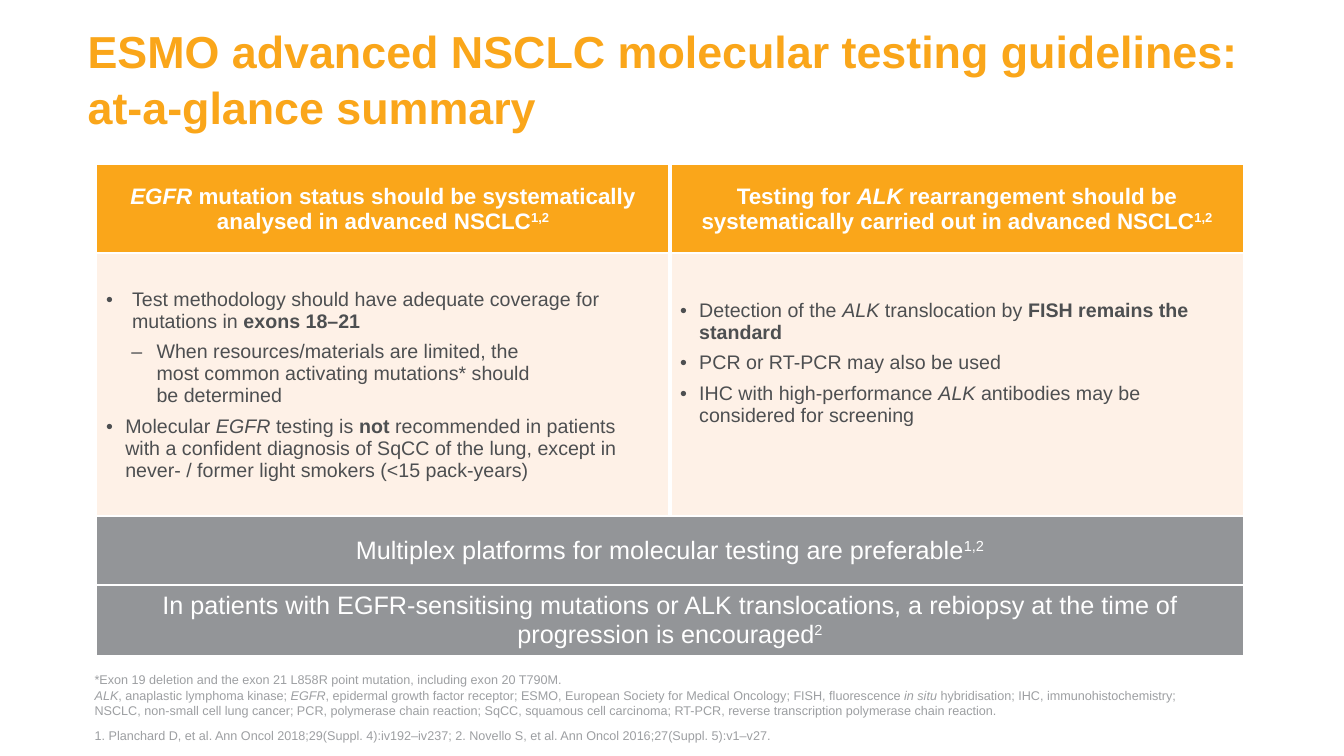
from copy import deepcopy
from dataclasses import dataclass

from lxml.etree import SubElement
from pptx import Presentation
from pptx.dml.color import RGBColor
from pptx.enum.text import MSO_ANCHOR, PP_ALIGN
from pptx.oxml import parse_xml
from pptx.oxml.ns import nsdecls, qn
from pptx.util import Pt

ORANGE = RGBColor(0xFA, 0xA6, 0x1A)
CREAM = RGBColor(0xFE, 0xF1, 0xE7)
GREY = RGBColor(0x93, 0x95, 0x98)
DARK = RGBColor(0x4D, 0x4F, 0x51)
NOTE = RGBColor(0x9D, 0x9F, 0xA2)
WHITE = RGBColor(0xFF, 0xFF, 0xFF)


@dataclass(frozen=True)
class Run:
    text: str
    bold: bool = False
    italic: bool = False
    superscript: bool = False


@dataclass(frozen=True)
class Para:
    runs: tuple[Run, ...]
    bullet: str = ""
    indent: float = 0
    hang: float = 0
    level: int = 0


@dataclass(frozen=True)
class Style:
    size: float
    color: RGBColor
    bold: bool = False
    align: PP_ALIGN = PP_ALIGN.LEFT
    line_spacing: float = 1.0
    space_before: float = 0


@dataclass(frozen=True)
class Box:
    left: float
    top: float
    width: float
    height: float
    anchor: MSO_ANCHOR
    margins: tuple[float, float]
    style: Style
    paras: tuple[Para, ...]


@dataclass(frozen=True)
class Cell:
    row: int
    col: int
    fill: RGBColor
    style: Style
    paras: tuple[Para, ...]
    bottom: float = 3.6
    full_width: bool = False


TITLE_STYLE = Style(32, ORANGE, bold=True, line_spacing=1.05)
NOTE_STYLE = Style(9, NOTE)
HEAD_STYLE = Style(16, WHITE, bold=True, align=PP_ALIGN.CENTER)
BODY_STYLE = Style(14, DARK, space_before=6)
BAND_STYLE = Style(18, WHITE, align=PP_ALIGN.CENTER)

BOXES = (
    Box(60.5, 486.7, 834.5, 29.5, MSO_ANCHOR.BOTTOM, (7.2, 3.6), NOTE_STYLE, (
        Para((Run("*Exon 19 deletion and the exon 21 L858R point mutation, including exon 20 T790M."),)),
        Para((
            Run("ALK", italic=True),
            Run(", anaplastic lymphoma kinase; "),
            Run("EGFR", italic=True),
            Run(", epidermal growth factor receptor; ESMO, European Society for Medical Oncology; FISH, fluorescence "),
            Run("in situ ", italic=True),
            Run("hybridisation; IHC, immunohistochemistry; \nNSCLC, non-small cell lung cancer; PCR, polymerase "
                "chain reaction; SqCC, squamous cell carcinoma; RT-PCR, reverse transcription polymerase chain reaction."),
        )),
    )),
    Box(60.5, 516.2, 834.5, 23.8, MSO_ANCHOR.TOP, (7.2, 3.6), NOTE_STYLE, (
        Para((Run("1. Planchard D, et al. Ann Oncol 2018;29(Suppl. 4):iv192–iv237; "
                  "2. Novello S, et al. Ann Oncol 2016;27(Suppl. 5):v1–v27."),)),
    )),
    Box(62.6, 24.5, 869.8, 61.2, MSO_ANCHOR.MIDDLE, (0, 0), TITLE_STYLE, (
        Para((Run("ESMO advanced NSCLC molecular testing guidelines: \nat-a-glance summary"),)),
    )),
)

CELLS = (
    Cell(0, 0, ORANGE, HEAD_STYLE, (Para((
        Run("EGFR", italic=True),
        Run(" mutation status should be systematically analysed in advanced NSCLC"),
        Run("1,2", superscript=True),
    )),)),
    Cell(0, 1, ORANGE, HEAD_STYLE, (Para((
        Run("Testing for "),
        Run("ALK ", italic=True),
        Run("rearrangement should be systematically carried out in advanced NSCLC"),
        Run("1,2", superscript=True),
    )),)),
    Cell(1, 0, CREAM, BODY_STYLE, (
        Para((
            Run("Test methodology should have adequate coverage for mutations in "),
            Run("exons 18–21", bold=True),
        ), "•", 18.5, 18.5),
        Para((
            Run("When resources/materials are limited, the \nmost common activating mutations* should \nbe determined"),
        ), "–", 36, 18, 1),
        Para((
            Run("Molecular "),
            Run("EGFR", italic=True),
            Run(" testing is "),
            Run("not", bold=True),
            Run(" recommended in patients \nwith a confident diagnosis of SqCC of the lung, "
                "except in never- / former light smokers (<15 pack-years)"),
        ), "•", 13.7, 13.7),
    )),
    Cell(1, 1, CREAM, BODY_STYLE, (
        Para((
            Run("Detection of the "),
            Run("ALK", italic=True),
            Run(" translocation by "),
            Run("FISH remains the standard", bold=True),
        ), "•", 13.7, 13.7),
        Para((Run("PCR or RT-PCR may also be used"),), "•", 13.7, 13.7),
        Para((
            Run("IHC with high-performance "),
            Run("ALK", italic=True),
            Run(" antibodies may be considered for screening"),
        ), "•", 13.7, 13.7),
    ), bottom=35),
    Cell(2, 0, GREY, BAND_STYLE, (Para((
        Run("Multiplex platforms for molecular testing are preferable"),
        Run("1,2", superscript=True),
    )),), full_width=True),
    Cell(3, 0, GREY, BAND_STYLE, (Para((
        Run("In patients with EGFR-sensitising mutations or ALK translocations, "
            "a rebiopsy at the time of progression is encouraged"),
        Run("2", superscript=True),
    )),), full_width=True),
)


def add_run(p, run: Run, style: Style) -> None:
    """Append a run to a paragraph, turning newlines into line breaks."""
    for i, line in enumerate(run.text.split("\n")):
        if i:
            p.add_line_break()
            p._p[-1].append(deepcopy(r._r.rPr))
        r = p.add_run()
        r.text = line
        r.font.name = "Arial"
        r.font.size = Pt(style.size)
        r.font.bold = style.bold or run.bold
        r.font.italic = run.italic
        r.font.color.rgb = style.color
        if run.superscript:
            r._r.get_or_add_rPr().set("baseline", "30000")


def fill_text(tf, paras: tuple[Para, ...], style: Style) -> None:
    """Write styled paragraphs into a text frame."""
    for i, para in enumerate(paras):
        p = tf.add_paragraph() if i else tf.paragraphs[0]
        if para.bullet:
            pPr = p._p.get_or_add_pPr()
            pPr.set("marL", str(Pt(para.indent)))
            pPr.set("indent", str(-Pt(para.hang)))
            SubElement(pPr, qn("a:buFont")).set("typeface", "Arial")
            SubElement(pPr, qn("a:buChar")).set("char", para.bullet)
        p.level = para.level
        p.alignment = style.align
        p.line_spacing = style.line_spacing
        p.space_before = Pt(style.space_before if i else 0)
        for run in para.runs:
            add_run(p, run, style)


def add_box(s, box: Box) -> None:
    """Draw one text box."""
    sp = s.shapes.add_textbox(Pt(box.left), Pt(box.top), Pt(box.width), Pt(box.height))
    tf = sp.text_frame
    tf.word_wrap = True
    tf.vertical_anchor = box.anchor
    tf.margin_left = tf.margin_right = Pt(box.margins[0])
    tf.margin_top = tf.margin_bottom = Pt(box.margins[1])
    fill_text(tf, box.paras, box.style)


def set_borders(cell, widths: dict[str, float]) -> None:
    """Give a table cell white borders."""
    tcPr = cell._tc.get_or_add_tcPr()
    for i, (side, width) in enumerate(widths.items()):
        tcPr.insert(i, parse_xml(
            f'<a:ln{side} {nsdecls("a")} w="{Pt(width)}"><a:solidFill>'
            f'<a:srgbClr val="{WHITE}"/></a:solidFill></a:ln{side}>'))


def add_guideline_table(s) -> None:
    """Draw the table of testing guidelines."""
    table = s.shapes.add_table(4, 2, Pt(68.6), Pt(117.5), Pt(820), Pt(350.7)).table
    table.first_row = table.horz_banding = False
    for column in table.columns:
        column.width = Pt(410)
    for row, height in zip(table.rows, (63.4, 187.9, 49, 50.4)):
        row.height = Pt(height)
    for item in CELLS:
        cell = table.cell(item.row, item.col)
        if item.full_width:
            cell.merge(table.cell(item.row, 1))
        cell.fill.solid()
        cell.fill.fore_color.rgb = item.fill
        cell.vertical_anchor = MSO_ANCHOR.MIDDLE
        cell.margin_bottom = Pt(item.bottom)
        inner = 1 if item.full_width else 3
        set_borders(cell, {"L": inner if item.col else 1, "R": 1 if item.col else inner,
                           "T": 1.5 if item.row else 1, "B": 1.5})
        fill_text(cell.text_frame, item.paras, item.style)


def main() -> None:
    """Build the slide and save it."""
    prs = Presentation()
    prs.slide_width, prs.slide_height = Pt(960), Pt(540)
    s = prs.slides.add_slide(prs.slide_layouts[6])
    for box in BOXES:
        add_box(s, box)
    add_guideline_table(s)
    prs.save("out.pptx")


if __name__ == "__main__":
    main()
